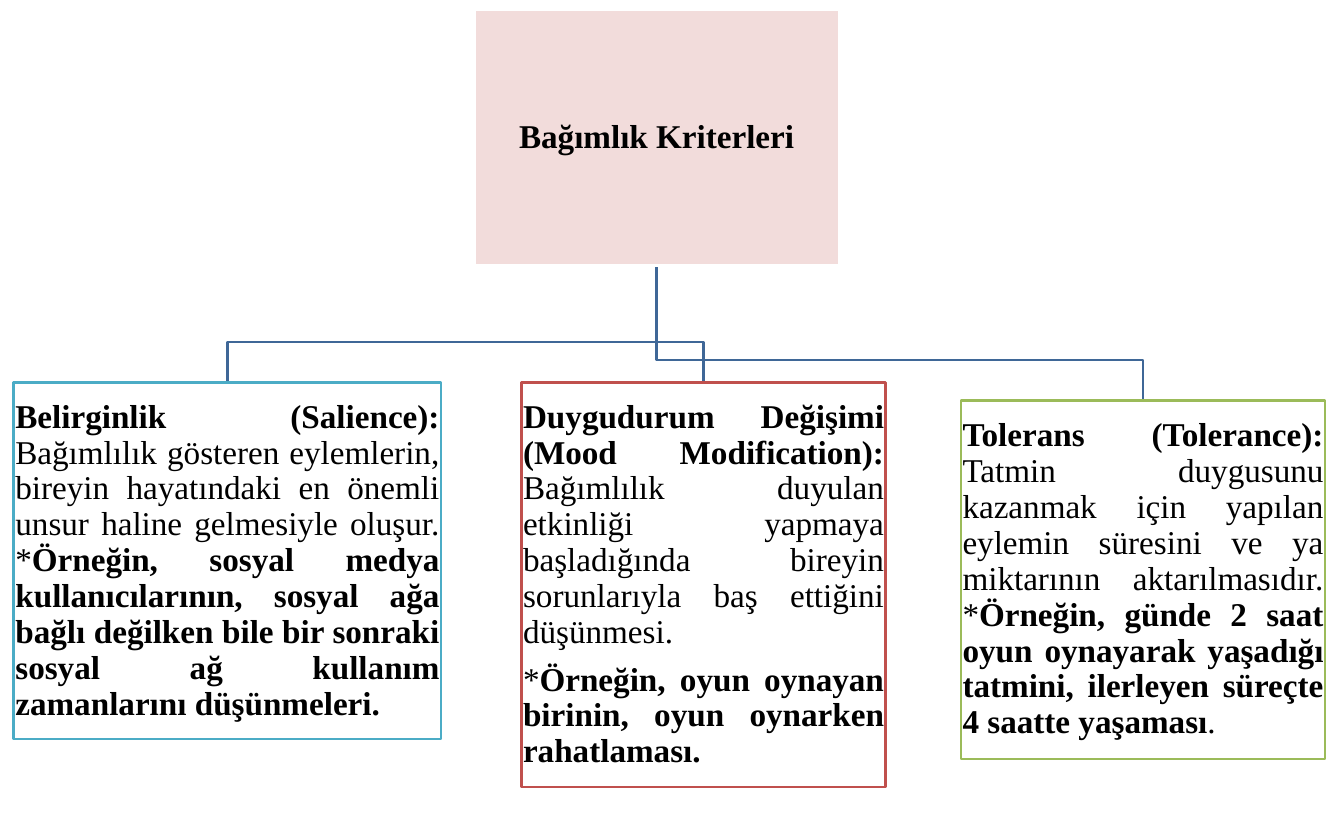
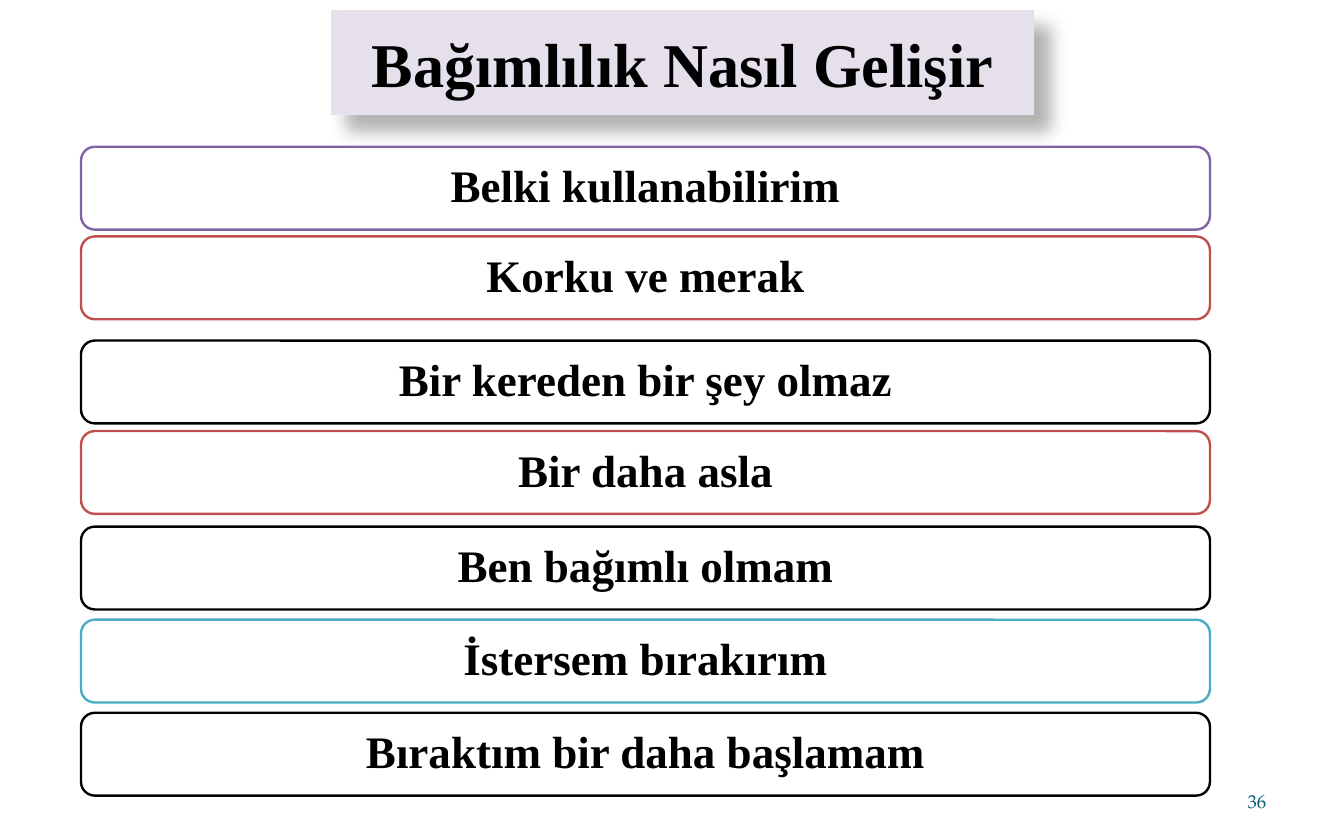
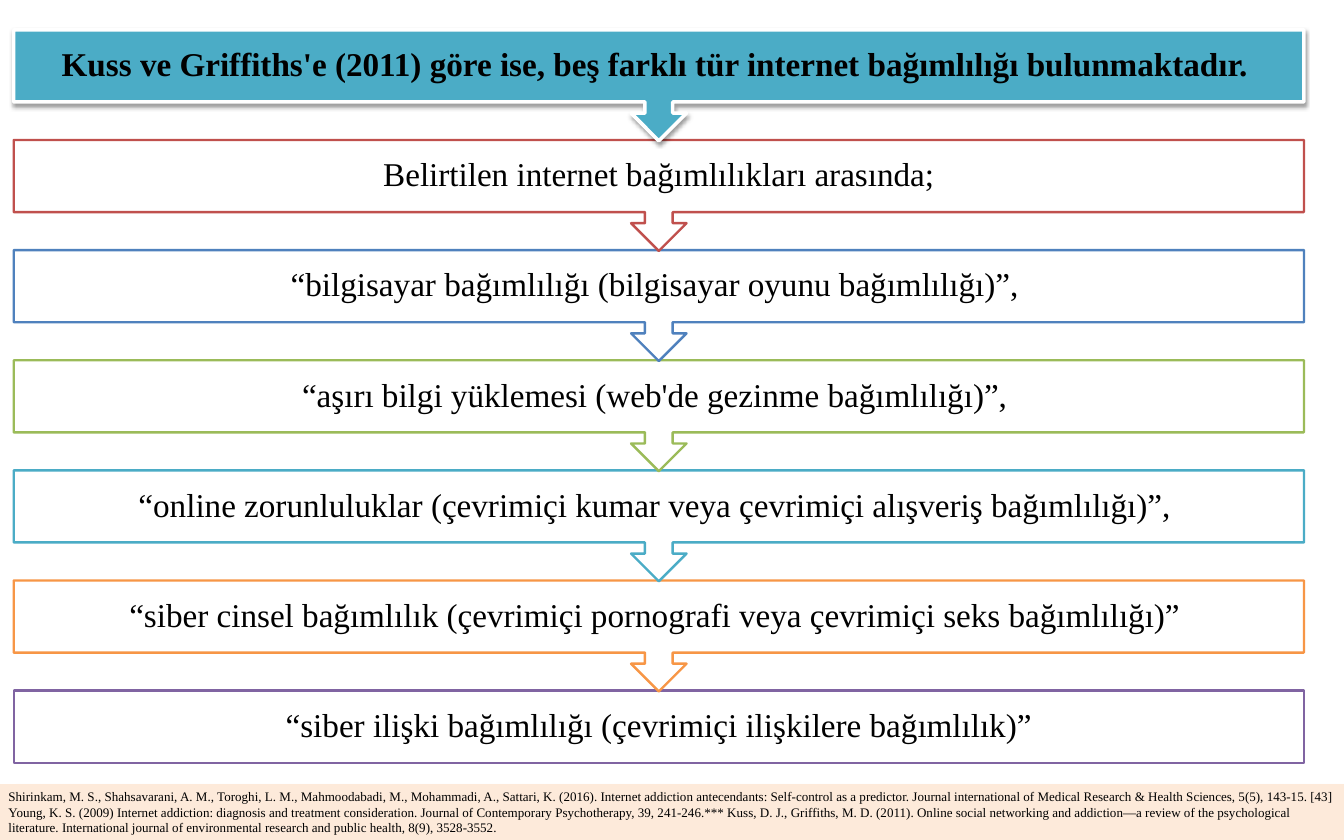
from lxml.etree import SubElement
from pptx import Presentation
from pptx.dml.color import RGBColor
from pptx.enum.shapes import MSO_SHAPE
from pptx.enum.text import MSO_ANCHOR, PP_ALIGN
from pptx.oxml.ns import qn
from pptx.util import Inches, Pt

# Colours
BLACK = RGBColor(0x00, 0x00, 0x00)
WHITE = RGBColor(0xFF, 0xFF, 0xFF)
RED = RGBColor(0xC0, 0x50, 0x4D)
BLUE = RGBColor(0x4F, 0x81, 0xBD)
GREEN = RGBColor(0x9B, 0xBB, 0x59)
TEAL = RGBColor(0x4B, 0xAC, 0xC6)
ORANGE = RGBColor(0xF7, 0x96, 0x46)
PURPLE = RGBColor(0x80, 0x64, 0xA2)
BRANCH_BLUE = RGBColor(0x3F, 0x67, 0x97)
PALE_ROSE = RGBColor(0xF2, 0xDC, 0xDB)
PALE_LILAC = RGBColor(0xE6, 0xE0, 0xEC)
PALE_PEACH = RGBColor(0xFD, 0xEA, 0xDA)
NUMBER_BLUE = RGBColor(0x04, 0x5C, 0x75)

# Shared type and shadows (opacity %, blur pt, distance pt, angle)
SERIF = "Times New Roman"
NUMBER_FONT = "TeX Gyre Pagella"
BODY_SIZE = 28
DEEP_SHADOW = (30, 15, 18, 45)
SOFT_SHADOW = (38, 3.1, 1.6, 90)


class Board:
    """Style and current slide; places are percentages of the slide's size."""

    def __init__(self):
        self.deck = Presentation()
        self.deck.slide_width = Inches(15.75)
        self.deck.slide_height = Inches(9.84)
        self.page = None

    def new_page(self):
        self.page = self.deck.slides.add_slide(self.deck.slide_layouts[6])

    def across(self, share):
        return round(self.deck.slide_width * share / 100)

    def down(self, share):
        return round(self.deck.slide_height * share / 100)

    def place(self, left, top, width, height):
        return (self.across(left), self.down(top),
                self.across(width), self.down(height))

    def box(self, place, paragraphs, kind=MSO_SHAPE.RECTANGLE, fill=WHITE,
            line=None, weight=2, shadow=None, **text_style):
        """Draw a filled preset shape that holds its own text."""
        shape = self.page.shapes.add_shape(kind, *self.place(*place))
        shape.fill.solid()
        shape.fill.fore_color.rgb = fill
        if line is None:
            shape.line.fill.background()
        else:
            shape.line.color.rgb = line
            shape.line.width = Pt(weight)
        shape.shadow.inherit = False
        if shadow:
            self.cast_shadow(shape, *shadow)
        self.fill_text(shape.text_frame, paragraphs, **text_style)

    def label(self, place, paragraphs, **text_style):
        """Draw a plain text box."""
        shape = self.page.shapes.add_textbox(*self.place(*place))
        self.fill_text(shape.text_frame, paragraphs, **text_style)

    def branch(self, points):
        """Draw an open line through the given points."""
        corners = [(self.across(x), self.down(y)) for x, y in points]
        builder = self.page.shapes.build_freeform(*corners[0])
        builder.add_line_segments(corners[1:], close=False)
        shape = builder.convert_to_shape()
        shape.fill.background()
        shape.line.color.rgb = BRANCH_BLUE
        shape.line.width = Pt(2)
        shape.shadow.inherit = False

    def cast_shadow(self, shape, opacity, blur, distance, angle):
        effects = shape._element.spPr.find(qn("a:effectLst"))
        outer = SubElement(effects, qn("a:outerShdw"), blurRad=str(Pt(blur)),
                           dist=str(Pt(distance)), dir=str(angle * 60000),
                           algn="tl", rotWithShape="0")
        colour = SubElement(outer, qn("a:srgbClr"), val=str(BLACK))
        SubElement(colour, qn("a:alpha"), val=str(opacity * 1000))

    def fill_text(self, frame, paragraphs, size=BODY_SIZE, font=SERIF,
                  colour=BLACK, align=PP_ALIGN.CENTER,
                  anchor=MSO_ANCHOR.MIDDLE, inset=(0.02, 0.02), tight=True):
        """Fill a frame; each paragraph is a list of (text, bold) runs."""
        frame.word_wrap = True
        frame.vertical_anchor = anchor
        frame.margin_left = frame.margin_right = Inches(inset[0])
        frame.margin_top = frame.margin_bottom = Inches(inset[1])
        for index, runs in enumerate(paragraphs):
            para = frame.add_paragraph() if index else frame.paragraphs[0]
            para.alignment = align
            if tight:
                para.line_spacing = 0.9
                para.space_after = Pt(round(size * 0.35))
            for text, bold in runs:
                span = para.add_run()
                span.text = text
                span.font.name = font
                span.font.size = Pt(size)
                span.font.bold = bold
                span.font.color.rgb = colour


PLAIN_INSET = (0.12, 0.06)

# Criteria: place, outline, paragraphs
CRITERIA = [
    ((1.02, 45.53, 31.81, 42.48), TEAL, [[
        ("Belirginlik (Salience): ", True),
        ("Bağımlılık gösteren eylemlerin, bireyin hayatındaki en önemli unsur "
         "haline gelmesiyle oluşur. *", False),
        ("Örneğin, sosyal medya kullanıcılarının, sosyal ağa bağlı değilken "
         "bile bir sonraki sosyal ağ kullanım zamanlarını düşünmeleri.", True),
    ]]),
    ((38.79, 45.53, 27.11, 48.17), RED, [[
        ("Duygudurum Değişimi (Mood Modification): ", True),
        ("Bağımlılık duyulan etkinliği yapmaya başladığında bireyin "
         "sorunlarıyla baş ettiğini düşünmesi. ", False),
    ], [
        ("*", False),
        ("Örneğin, oyun oynayan birinin, oyun oynarken rahatlaması.", True),
    ]]),
    ((71.49, 47.66, 27.11, 42.68), GREEN, [[
        ("Tolerans (Tolerance): ", True),
        ("Tatmin duygusunu kazanmak için yapılan eylemin süresini ve ya "
         "miktarının aktarılmasıdır. *", False),
        ("Örneğin, günde 2 saat oyun oynayarak yaşadığı tatmini, ilerleyen "
         "süreçte 4 saatte yaşaması", True),
        (".", False),
    ]]),
]

# Stages: top, outline, text
STAGES = [
    (17.48, PURPLE, "Belki kullanabilirim"),
    (28.15, RED, "Korku ve merak"),
    (40.55, BLACK, "Bir kereden bir şey olmaz"),
    (51.32, RED, "Bir daha asla"),
    (62.7, BLACK, "Ben bağımlı olmam"),
    (73.78, TEAL, "İstersem bırakırım"),
    (84.86, BLACK, "Bıraktım bir daha başlamam"),
]

# Steps below the heading: outline, text
STEPS = [
    (RED, "Belirtilen internet bağımlılıkları arasında;"),
    (BLUE, "“bilgisayar bağımlılığı (bilgisayar oyunu bağımlılığı)”, "),
    (GREEN, "“aşırı bilgi yüklemesi (web'de gezinme bağımlılığı)”, "),
    (TEAL, "“online zorunluluklar (çevrimiçi kumar veya çevrimiçi alışveriş "
           "bağımlılığı)”, "),
    (ORANGE, "“siber cinsel bağımlılık (çevrimiçi pornografi veya çevrimiçi "
             "seks bağımlılığı)” "),
    (PURPLE, "“siber ilişki bağımlılığı (çevrimiçi ilişkilere bağımlılık)”"),
]
HEADING = ("Kuss ve Griffiths'e (2011) göre ise, beş farklı tür internet "
           "bağımlılığı bulunmaktadır. ")
REFERENCES = (
    "Shirinkam, M. S., Shahsavarani, A. M., Toroghi, L. M., Mahmoodabadi, M., "
    "Mohammadi, A., Sattari, K. (2016). Internet addiction antecendants: "
    "Self-control as a predictor. Journal international of Medical Research & "
    "Health Sciences, 5(5), 143-15. [43] Young, K. S. (2009) Internet addiction: "
    "diagnosis and treatment consideration. Journal of Contemporary "
    "Psychotherapy, 39, 241-246.*** Kuss, D. J., Griffiths, M. D. (2011). Online "
    "social networking and addiction—a review of the psychological literature. "
    "International journal of environmental research and public health, 8(9), "
    "3528-3552.")


def build_criteria(board):
    board.new_page()
    left, top, width, height = root = (35.3, 1.22, 27.11, 30.39)
    stem, base, drop = left + width / 2, top + height, 4.78

    # Branches lie behind the boxes
    for (child_left, child_top, child_width, _), _, _ in reversed(CRITERIA):
        centre, bend = child_left + child_width / 2, child_top - drop
        board.branch([(stem, base), (stem, bend), (centre, bend),
                      (centre, child_top)])
    board.box(root, [[("Bağımlık Kriterleri", True)]], fill=PALE_ROSE, line=WHITE)
    for place, outline, paragraphs in CRITERIA:
        board.box(place, paragraphs, line=outline, align=PP_ALIGN.JUSTIFY)


def build_stages(board):
    board.new_page()
    board.box((24.63, 1.22, 52.32, 12.5), [[("Bağımlılık Nasıl Gelişir", True)]],
              fill=PALE_LILAC, shadow=DEEP_SHADOW, size=52.5,
              inset=PLAIN_INSET, tight=False)
    for top, outline, text in STAGES:
        board.box((6.03, top, 84, 9.86), [[(text, True)]],
                  kind=MSO_SHAPE.ROUNDED_RECTANGLE, line=outline, size=38,
                  inset=(0.16, 0.16))
    board.label((71.68, 92.68, 23.3, 5.28), [[("36", False)]], size=15.8,
                font=NUMBER_FONT, colour=NUMBER_BLUE, align=PP_ALIGN.RIGHT,
                inset=PLAIN_INSET, tight=False)


def build_types(board):
    board.new_page()
    first, pitch, inset = 3.56, 13.11, (0.22, 0.22)

    # From the bottom up, so that each arrow tip covers the next box
    for row in range(len(STEPS), 0, -1):
        outline, text = STEPS[row - 1]
        last = row == len(STEPS)
        board.box((1.02, first + row * pitch, 96, 8.64 if last else 13.21),
                  [[(text, False)]], line=outline, inset=inset,
                  kind=MSO_SHAPE.RECTANGLE if last
                  else MSO_SHAPE.DOWN_ARROW_CALLOUT)
    board.box((1.02, first, 96, 13.21), [[(HEADING, True)]],
              kind=MSO_SHAPE.DOWN_ARROW_CALLOUT, fill=TEAL, line=WHITE, weight=3,
              shadow=SOFT_SHADOW, inset=inset)

    # Reference band
    board.box((0, 93.35, 100, 6.65), [[(REFERENCES, False)]], fill=PALE_PEACH,
              shadow=DEEP_SHADOW, size=11, align=PP_ALIGN.LEFT,
              anchor=MSO_ANCHOR.TOP, inset=(0.1, 0.05), tight=False)


def main():
    board = Board()
    build_criteria(board)
    build_stages(board)
    build_types(board)
    board.deck.save("out.pptx")


if __name__ == "__main__":
    main()
